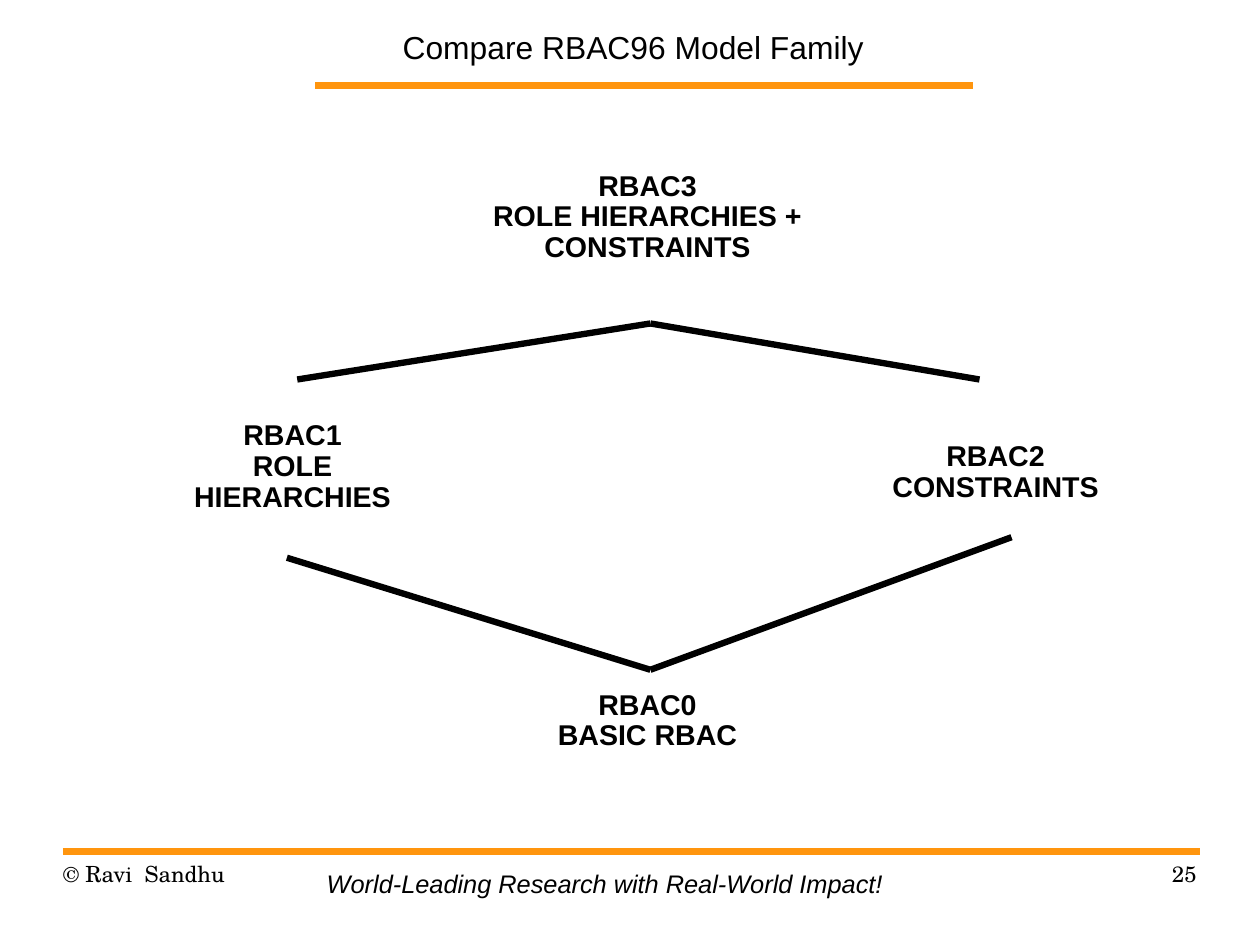
"""Build a slide comparing the four models of the RBAC96 family."""
from dataclasses import dataclass

from lxml.etree import SubElement
from pptx import Presentation
from pptx.dml.color import RGBColor
from pptx.enum.shapes import MSO_CONNECTOR
from pptx.enum.text import MSO_ANCHOR, MSO_AUTO_SIZE, PP_ALIGN
from pptx.oxml.ns import qn
from pptx.shapes.base import BaseShape
from pptx.slide import Slide
from pptx.util import Inches, Mm, Pt

COLOURS = {"text": "000000", "edge": "000000", "rule": "FF950E"}
WIDTH = Mm(280)
HEIGHT = Mm(210)
COLUMN = WIDTH / 100
ROW = HEIGHT / 100


@dataclass(frozen=True)
class Label:
    text: str
    left: float
    top: float
    width: float
    height: float
    size: int = 18
    font: str = "Arial"
    bold: bool = False
    italic: bool = False
    align: PP_ALIGN = PP_ALIGN.LEFT
    spacing: float = 1.0
    side_inset: float = 0.1
    top_inset: float = 0.05
    wrap: bool = False


@dataclass(frozen=True)
class Line:
    start: tuple[float, float]
    end: tuple[float, float]
    colour: str
    weight: float


def model(text: str, left: float, top: float, width: float, height: float) -> Label:
    return Label(text, left, top, width, height, bold=True,
                 align=PP_ALIGN.CENTER, spacing=0.9, side_inset=0.11)


def footer(text: str, left: float, align: PP_ALIGN) -> Label:
    return Label(text, left, 91.05, 23.32, 6.89, size=14, font="TeX Gyre Schola",
                 align=align, spacing=1.01, side_inset=0, top_inset=0, wrap=True)


TITLE = Label("Compare RBAC96 Model Family", 27.76, 0, 45, 7.62, size=20,
              align=PP_ALIGN.CENTER, side_inset=0.11, wrap=True)
LABELS = [
    footer("© Ravi  Sandhu", 4.99, PP_ALIGN.LEFT),
    footer("25", 71.66, PP_ALIGN.RIGHT),
    Label("World-Leading Research with Real-World Impact!",
          25.04, 91.32, 46.99, 4.47, size=16, italic=True),
    model("RBAC0\nBASIC RBAC", 43.18, 72.45, 16.42, 7.86),
    model("RBAC3\nROLE HIERARCHIES +\nCONSTRAINTS", 38.01, 17.54, 26.76, 11.25),
    model("RBAC1\nROLE\nHIERARCHIES", 14.33, 43.91, 17.78, 11.25),
    model("RBAC2\nCONSTRAINTS", 69.76, 46.2, 18.51, 7.86),
]
RULES = [
    Line((25.04, 9.07), (77.2, 9.07), "rule", 4.31),
    Line((4.99, 90.11), (95.25, 90.11), "rule", 4.31),
]
DIAMOND = {
    (51.62, 34.23): [(23.59, 40.16), (77.74, 40.16)],
    (51.62, 70.88): [(22.77, 59.02), (80.28, 56.85)],
}
EDGES = [Line(tip, end, "edge", 4) for tip, ends in DIAMOND.items() for end in ends]


def across(columns: float) -> int:
    return round(columns * COLUMN)


def down(rows: float) -> int:
    return round(rows * ROW)


def write_label(shape: BaseShape, label: Label) -> None:
    shape.left, shape.top = across(label.left), down(label.top)
    shape.width, shape.height = across(label.width), down(label.height)
    frame = shape.text_frame
    frame.text = label.text
    frame.word_wrap = label.wrap
    frame.auto_size = MSO_AUTO_SIZE.NONE if label.wrap else MSO_AUTO_SIZE.SHAPE_TO_FIT_TEXT
    frame.margin_left = frame.margin_right = Inches(label.side_inset)
    frame.margin_top = frame.margin_bottom = Inches(label.top_inset)
    for paragraph in frame.paragraphs:
        paragraph.alignment = label.align
        paragraph.line_spacing = label.spacing
        for run in paragraph.runs:
            run.font.name = label.font
            run.font.size = Pt(label.size)
            run.font.bold = label.bold
            run.font.italic = label.italic
            run.font.color.rgb = RGBColor.from_string(COLOURS["text"])


def draw_line(slide: Slide, line: Line) -> None:
    connector = slide.shapes.add_connector(
        MSO_CONNECTOR.STRAIGHT,
        across(line.start[0]), down(line.start[1]), across(line.end[0]), down(line.end[1]))
    connector.line.color.rgb = RGBColor.from_string(COLOURS[line.colour])
    connector.line.width = Pt(line.weight)
    SubElement(connector._element.spPr, qn("a:effectLst"))


def main() -> None:
    presentation = Presentation()
    presentation.slide_width = WIDTH
    presentation.slide_height = HEIGHT
    slide = presentation.slides.add_slide(presentation.slide_layouts[5])
    write_label(slide.shapes.title, TITLE)
    slide.shapes.title.text_frame.vertical_anchor = MSO_ANCHOR.BOTTOM
    for label in LABELS:
        write_label(slide.shapes.add_textbox(0, 0, 0, 0), label)
    for line in RULES + EDGES:
        draw_line(slide, line)
    presentation.save("out.pptx")


if __name__ == "__main__":
    main()
